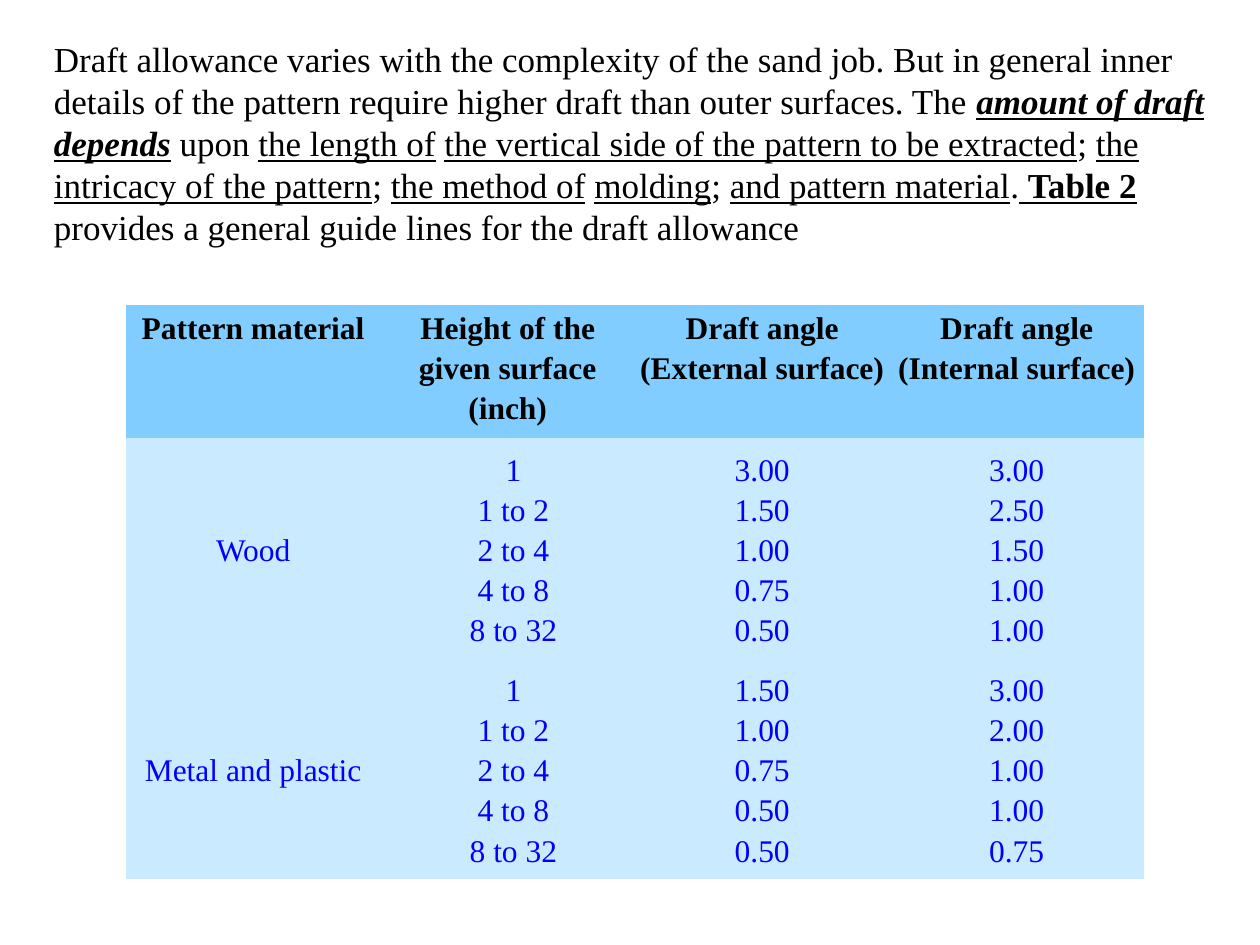
from dataclasses import dataclass

import pptx
import pptx.dml.color
import pptx.enum.text
import pptx.util

WIDTH, HEIGHT = 10, 7.5
FONT = "Times New Roman"
BLACK, BLUE = "000000", "0000FF"
HEADER_FILL, BODY_FILL = "82CDFF", "CAEAFF"
NO_STYLE_NO_GRID = "{2D5ABB26-0587-4C30-8999-92F81FD0307C}"
COL_WIDTH = 2.02
ROW_HEIGHTS = (1.05, 1.75, 1.75)
CELL_INSET = 0.01
HEIGHT_COLUMN = 1
HEIGHT_INDENT = 0.09

UNDERLINED = {"underline": True}
INTRO = (
    ("Draft allowance varies with the complexity of the sand job. But in general "
     "inner details of the pattern require higher draft than outer surfaces. The ", {}),
    ("amount of draft depends", {"bold": True, "italic": True, "underline": True}),
    (" upon ", {}),
    ("the length of", UNDERLINED),
    (" ", {}),
    ("the vertical side of the pattern to be extracted", UNDERLINED),
    ("; ", {}),
    ("the intricacy of the pattern", UNDERLINED),
    ("; ", {}),
    ("the method of", UNDERLINED),
    (" ", {}),
    ("molding", UNDERLINED),
    ("; ", {}),
    ("and pattern material", UNDERLINED),
    (".", {}),
    (" ", UNDERLINED),
    ("Table 2", {"bold": True, "underline": True}),
    (" provides a general guide lines for the draft allowance", {}),
)


@dataclass
class Material:
    name: str
    external: tuple[str, ...]
    internal: tuple[str, ...]


HEADERS = (
    ("Pattern material",),
    ("Height of the given surface (inch)",),
    ("Draft angle", "(External surface)"),
    ("Draft angle", "(Internal surface)"),
)
SURFACE_HEIGHTS = ("1", "1 to 2", "2 to 4", "4 to 8", "8 to 32")
MATERIALS = (
    Material("Wood", ("3.00", "1.50", "1.00", "0.75", "0.50"),
             ("3.00", "2.50", "1.50", "1.00", "1.00")),
    Material("Metal and plastic", ("1.50", "1.00", "0.75", "0.50", "0.50"),
             ("3.00", "2.00", "1.00", "1.00", "0.75")),
)


def rgb(value: str) -> pptx.dml.color.RGBColor:
    return pptx.dml.color.RGBColor.from_string(value)


def add_text(p, text: str, *, size: float, color: str = BLACK, bold: bool = False,
             italic: bool = False, underline: bool = False) -> None:
    r = p.add_run()
    r.text = text
    r.font.name, r.font.size = FONT, pptx.util.Pt(size)
    r.font.bold, r.font.italic, r.font.underline = bold, italic, underline
    r.font.color.rgb = rgb(color)


def add_intro(s) -> None:
    box = s.shapes.add_textbox(*(pptx.util.Inches(n) for n in (0.33, 0.25, 9.5, 1.78)))
    tf = box.text_frame
    tf.word_wrap = True
    tf.auto_size = pptx.enum.text.MSO_AUTO_SIZE.SHAPE_TO_FIT_TEXT
    for text, style in INTRO:
        add_text(tf.paragraphs[0], text, size=20, **style)


def fill_cell(cell, lines: tuple[str, ...], *, header: bool, indent: float = 0) -> None:
    cell.fill.solid()
    cell.fill.fore_color.rgb = rgb(HEADER_FILL if header else BODY_FILL)
    inset = pptx.util.Inches(CELL_INSET)
    cell.margin_left = cell.margin_right = cell.margin_top = cell.margin_bottom = inset
    anchor = pptx.enum.text.MSO_ANCHOR
    cell.vertical_anchor = anchor.TOP if header else anchor.MIDDLE
    tf = cell.text_frame
    for i, line in enumerate(lines):
        p = tf.add_paragraph() if i else tf.paragraphs[0]
        p.alignment = pptx.enum.text.PP_ALIGN.CENTER
        p.line_spacing = 1.15
        if header and len(lines) == 1:
            p.space_after = pptx.util.Pt(10)
        if indent:
            p_pr = p._p.get_or_add_pPr()
            p_pr.set("marL", "0")
            p_pr.set("indent", str(pptx.util.Inches(indent)))
        add_text(p, line, size=18, color=BLACK if header else BLUE, bold=header)


def add_draft_table(s) -> None:
    rows = [HEADERS] + [((m.name,), SURFACE_HEIGHTS, m.external, m.internal)
                        for m in MATERIALS]
    frame = s.shapes.add_table(
        len(rows), len(HEADERS), pptx.util.Inches(1), pptx.util.Inches(2.42),
        pptx.util.Inches(COL_WIDTH * len(HEADERS)), pptx.util.Inches(sum(ROW_HEIGHTS)))
    table = frame.table
    table.first_row = table.horz_banding = False
    table._tbl.tblPr[0].text = NO_STYLE_NO_GRID
    for column in table.columns:
        column.width = pptx.util.Inches(COL_WIDTH)
    for i, row in enumerate(rows):
        table.rows[i].height = pptx.util.Inches(ROW_HEIGHTS[i])
        for j, lines in enumerate(row):
            indent = HEIGHT_INDENT if i and j == HEIGHT_COLUMN else 0
            fill_cell(table.cell(i, j), lines, header=i == 0, indent=indent)


def main() -> None:
    prs = pptx.Presentation()
    prs.slide_width = pptx.util.Inches(WIDTH)
    prs.slide_height = pptx.util.Inches(HEIGHT)
    s = prs.slides.add_slide(prs.slide_layouts[6])
    add_intro(s)
    add_draft_table(s)
    prs.save("out.pptx")


if __name__ == "__main__":
    main()
